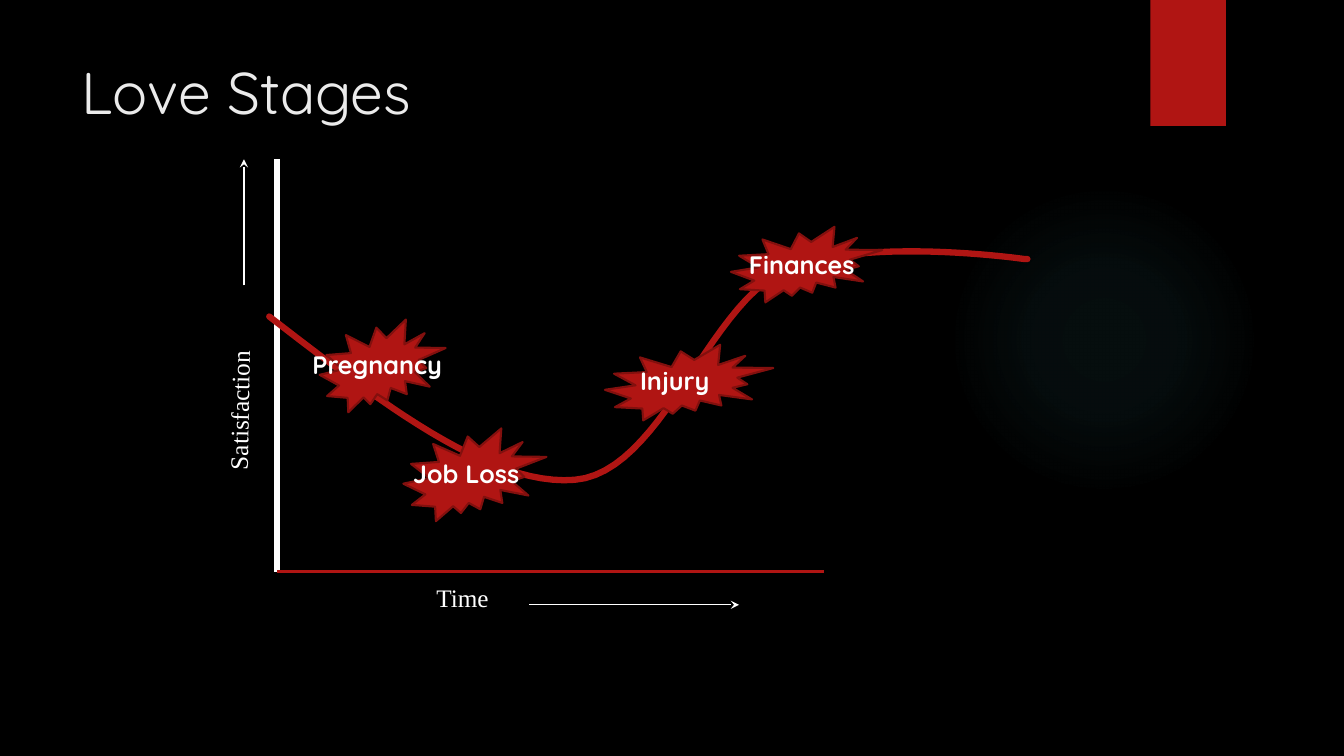
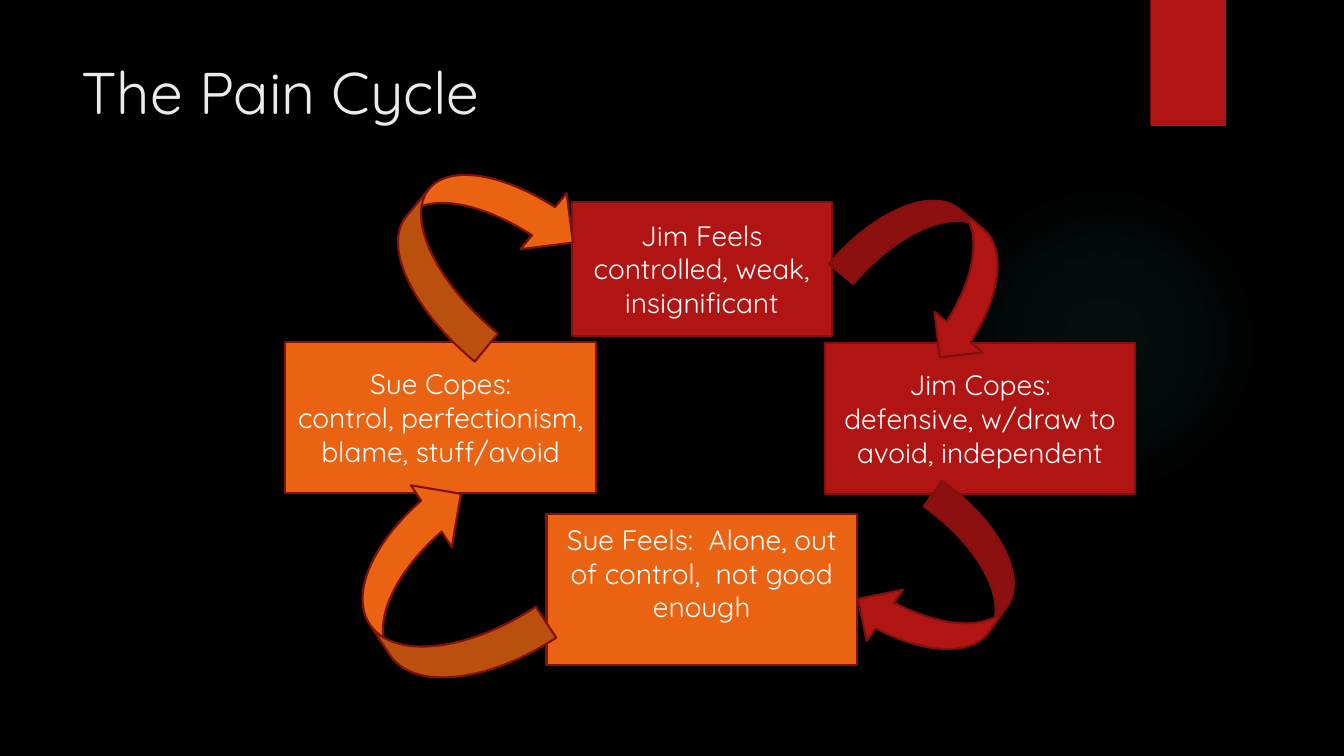
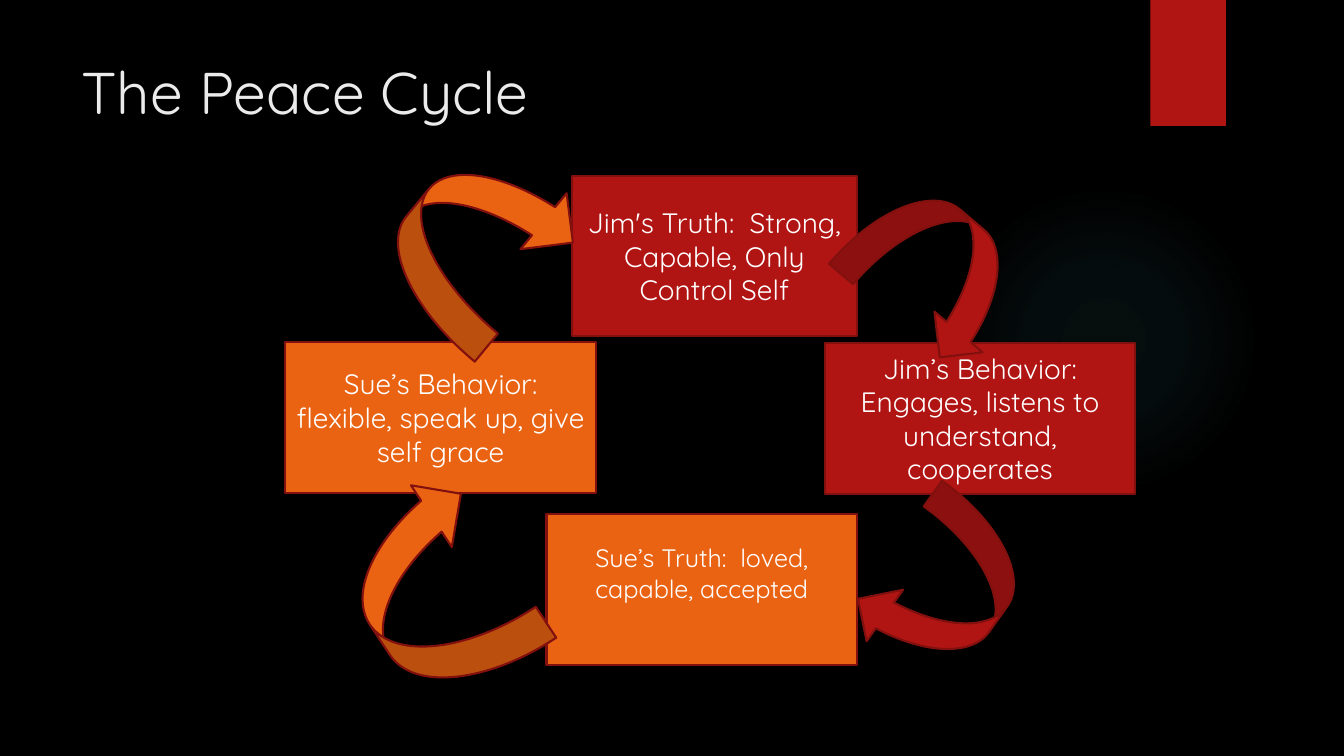
from lxml import etree
from pptx import Presentation
from pptx.dml.color import RGBColor
from pptx.enum.shapes import MSO_CONNECTOR, MSO_SHAPE
from pptx.enum.text import MSO_ANCHOR, PP_ALIGN
from pptx.oxml import parse_xml
from pptx.oxml.ns import nsdecls, qn
from pptx.util import Inches, Pt

COLORS = {
    "background": "000000",
    "title": "EBEBEB",
    "text": "FFFFFF",
    "red": "B01513",
    "dark_red": "82100E",
    "orange": "EA6312",
    "glow": "50B9C1",
}
SANS = "Quicksand"
SERIF = "Times New Roman"
CARD_SIZE = (3.08, 1.5)


def color(name):
    return RGBColor.from_string(COLORS[name])


def write(shape, text, size=18, font=SANS, ink="text", bold=False, wrap=True,
          align=PP_ALIGN.LEFT, anchor=MSO_ANCHOR.TOP, bottom=0.05):
    frame = shape.text_frame
    frame.word_wrap = wrap
    frame.vertical_anchor = anchor
    frame.margin_bottom = Inches(bottom)
    para = frame.paragraphs[0]
    para.text = text
    para.alignment = align
    for span in para.runs:
        span.font.name = font
        span.font.size = Pt(size)
        span.font.bold = bold
        span.font.color.rgb = color(ink)


def add_text(page, left, top, width, height, text, **style):
    box = page.shapes.add_textbox(Inches(left), Inches(top), Inches(width), Inches(height))
    write(box, text, **style)
    return box


def add_preset(page, preset, left, top, width, height, fill, outline=True):
    shape = page.shapes.add_shape(preset, Inches(left), Inches(top), Inches(width), Inches(height))
    shape.shadow.inherit = False
    shape.fill.solid()
    shape.fill.fore_color.rgb = color(fill)
    if outline:
        shape.line.color.rgb = color("dark_red")
        shape.line.width = Pt(1.5)
    else:
        shape.line.fill.background()
    return shape


def add_line(page, start, end, ink="text", width=1.0, arrow=False):
    line = page.shapes.add_connector(
        MSO_CONNECTOR.STRAIGHT, *(Inches(value) for value in (*start, *end)))
    line.line.color.rgb = color(ink)
    line.line.width = Pt(width)
    if arrow:
        etree.SubElement(line.line._get_or_add_ln(), qn("a:tailEnd"), type="stealth")
    etree.SubElement(line._element.spPr, qn("a:effectLst"))
    return line


def add_glow(page, left, top, size):
    """Faint round light that fades towards its edge."""
    glow = add_preset(page, MSO_SHAPE.OVAL, left, top, size, size, "glow", outline=False)
    stops = "".join(
        f'<a:gs pos="{position * 1000}"><a:srgbClr val="{COLORS["glow"]}">'
        f'<a:alpha val="{alpha * 1000}"/></a:srgbClr></a:gs>'
        for position, alpha in ((0, 7), (36, 6), (69, 0)))
    gradient = parse_xml(
        f'<a:gradFill {nsdecls("a")} rotWithShape="1"><a:gsLst>{stops}</a:gsLst>'
        '<a:path path="circle"><a:fillToRect l="50000" t="50000" r="50000" b="50000"/>'
        '</a:path></a:gradFill>')
    properties = glow._element.spPr
    properties.replace(properties.find(qn("a:solidFill")), gradient)


def add_page(deck, title):
    page = deck.slides.add_slide(deck.slide_layouts[6])
    add_glow(page, 9.41, 1.83, 3.08)
    add_preset(page, MSO_SHAPE.RECTANGLE, 11.41, 0, 0.75, 1.25, "red", outline=False)
    add_text(page, 0.71, 0.5, 10.29, 1.53, title, size=42, ink="title")
    return page


def bezier(start, first, second, end, steps=24):
    """Points along a cubic curve, without its start."""
    for step in range(1, steps + 1):
        t = step / steps
        weights = ((1 - t) ** 3, 3 * t * (1 - t) ** 2, 3 * t * t * (1 - t), t ** 3)
        yield tuple(
            sum(weight * value for weight, value in zip(weights, values))
            for values in zip(start, first, second, end))


def add_satisfaction_curve(page, left, top):
    start = (-0.08, 1.56)
    segments = (
        ((1.01, 2.4), (2.1, 3.25), (2.95, 3.18)),
        ((3.8, 3.11), (4.26, 1.48), (5, 1.12)),
        ((5.75, 0.75), (7.41, 0.99), (7.41, 0.99)),
    )
    points = [start]
    for segment in segments:
        points.extend(bezier(points[-1], *segment))
    points.append((7.44, 0.99))
    places = [(Inches(left + x), Inches(top + y)) for x, y in points]
    builder = page.shapes.build_freeform(*places[0])
    builder.add_line_segments(places[1:], close=False)
    curve = builder.convert_to_shape()
    curve.shadow.inherit = False
    curve.fill.background()
    curve.line.color.rgb = color("red")
    curve.line.width = Pt(4.5)
    curve.line._get_or_add_ln().set("cap", "rnd")


def add_crisis(page, left, top, width, height, name, shift, drop, label_width):
    """Burst with its name, which starts shift and drop away from its corner."""
    add_preset(page, MSO_SHAPE.EXPLOSION2, left, top, width, height, "red")
    add_text(page, left + shift, top + drop, label_width, 0.4, name, bold=True)


def add_love_graph(page, left, top):
    height = 4.09
    base = top + height
    add_line(page, (left, top), (left, base), width=4)
    label = add_text(page, left - 1.08, top + 2.28, 1.4, 0.4, "Satisfaction",
                     font=SERIF, wrap=False)
    label.rotation = 271
    add_line(page, (left - 0.33, top + 1.25), (left - 0.33, top), arrow=True)
    add_text(page, left + 1.48, base + 0.06, 0.73, 0.4, "Time", font=SERIF, wrap=False)
    add_line(page, (left + 2.5, base + 0.33), (left + 4.58, base + 0.33), arrow=True)
    add_line(page, (left, base), (left + 5.42, base), ink="red", width=2.25)
    add_satisfaction_curve(page, left, top)
    crises = (
        (0.42, 1.59, 1.25, 0.92, "Pregnancy", -0.17, 0.25, 1.58),
        (1.25, 2.67, 1.42, 0.92, "Job Loss", 0, 0.25, 1.33),
        (3.25, 1.84, 1.67, 0.75, "Injury", 0.25, 0.16, 1.08),
        (4.5, 0.67, 1.5, 0.75, "Finances", 0.08, 0.17, 1.83),
    )
    for x, y, *burst in crises:
        add_crisis(page, left + x, top + y, *burst)


def add_card(page, left, top, extent, fill, text, size=20, **style):
    card = add_preset(page, MSO_SHAPE.RECTANGLE, left, top, *extent, fill)
    write(card, text, size=size, align=PP_ALIGN.CENTER, anchor=MSO_ANCHOR.MIDDLE, **style)


def add_turn(page, left, top, width, height, angle, fill):
    """Curved arrow: red ones bend down, orange ones are mirrored and bend up."""
    mirrored = fill == "orange"
    preset = MSO_SHAPE.CURVED_UP_ARROW if mirrored else MSO_SHAPE.CURVED_DOWN_ARROW
    arrow = add_preset(page, preset, left, top, width, height, fill)
    arrow.rotation = angle
    if mirrored:
        arrow._element.spPr.find(qn("a:xfrm")).set("flipH", "1")


def add_cycle(page, left, top, texts, head_size, foot_text_size=20):
    """Four cards, clockwise from the top, with an arrow at each corner."""
    head, right, foot, side = texts
    add_card(page, left + 2.84, top + 1.65 - head_size[1], head_size, "red", head)
    add_card(page, left + 5.35, top + 1.72, CARD_SIZE, "red", right)
    add_card(page, left + 2.59, top + 3.42, CARD_SIZE, "orange", foot,
             size=foot_text_size, bottom=0.38)
    add_card(page, left, top + 1.71, CARD_SIZE, "orange", side)
    turns = (
        (5.59, 0.4, 1.75, 1.25, 40.2, "red"),
        (5.64, 3.54, 1.75, 1.25, 125.4, "red"),
        (0.46, 3.45, 2.08, 1.47, 56.5, "orange"),
        (0.98, 0, 1.89, 1.44, 129.5, "orange"),
    )
    for x, y, *turn in turns:
        add_turn(page, left + x, top + y, *turn)


def main():
    deck = Presentation()
    deck.slide_width = Inches(13.33)
    deck.slide_height = Inches(7.5)
    backdrop = deck.slide_master.background.fill
    backdrop.solid()
    backdrop.fore_color.rgb = color("background")

    add_love_graph(add_page(deck, "Love Stages"), 2.75, 1.58)

    pain = (
        "Jim Feels controlled, weak, insignificant",
        "Jim Copes:\vdefensive, w/draw to avoid, independent",
        "Sue Feels:  Alone, out of control,  not good enough",
        "Sue Copes:\vcontrol, perfectionism, blame, stuff/avoid",
    )
    add_cycle(add_page(deck, "The Pain Cycle"), 2.83, 1.68, pain, (2.58, 1.33))

    peace = (
        "Jim's Truth:  Strong, Capable, Only Control Self",
        "Jim’s Behavior: Engages, listens to understand, cooperates",
        "Sue’s Truth:  loved, capable, accepted",
        "Sue’s Behavior: flexible, speak up, give self grace",
    )
    add_cycle(add_page(deck, "The Peace Cycle"), 2.83, 1.68, peace, (2.83, 1.58),
              foot_text_size=18)

    deck.save("out.pptx")


if __name__ == "__main__":
    main()
